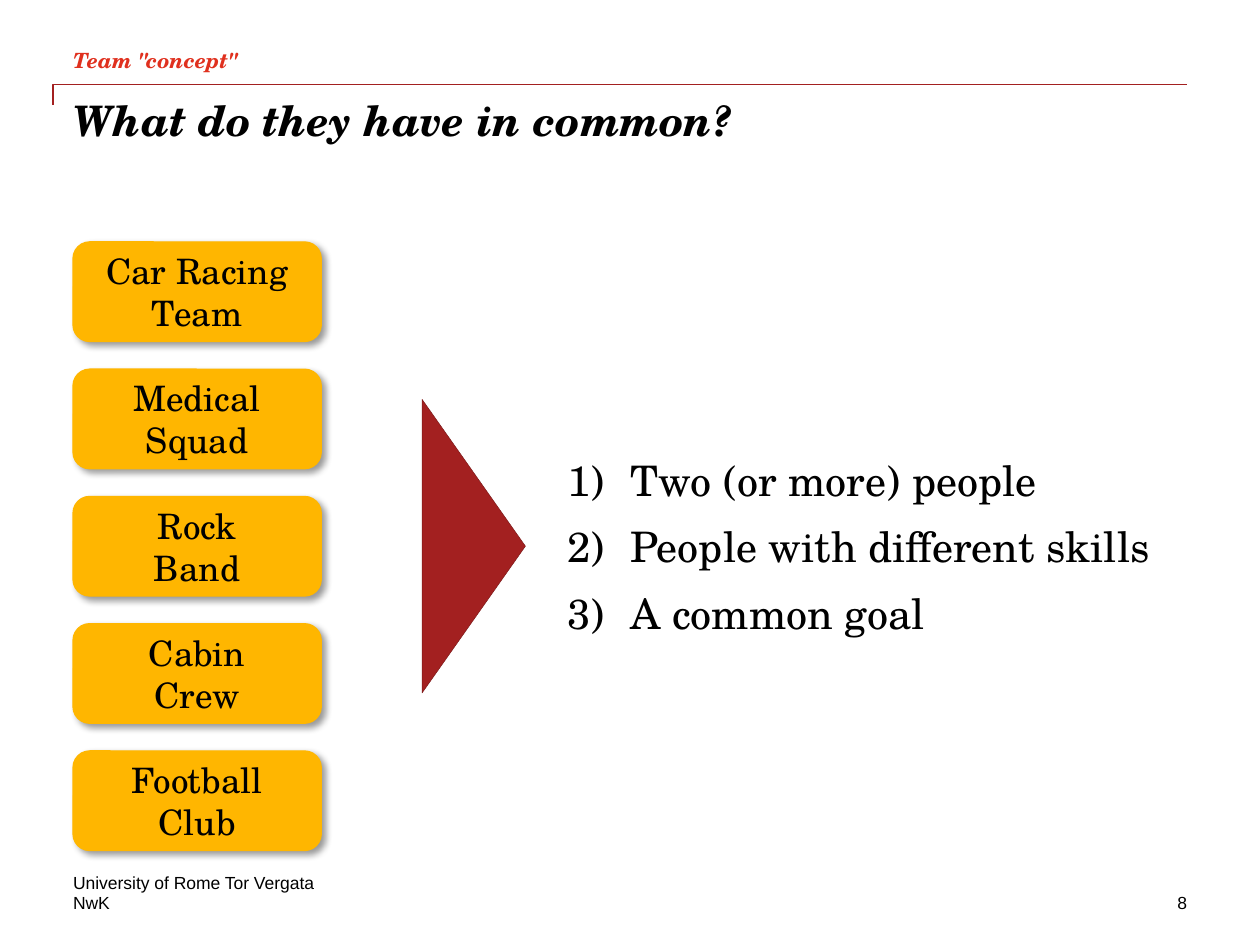
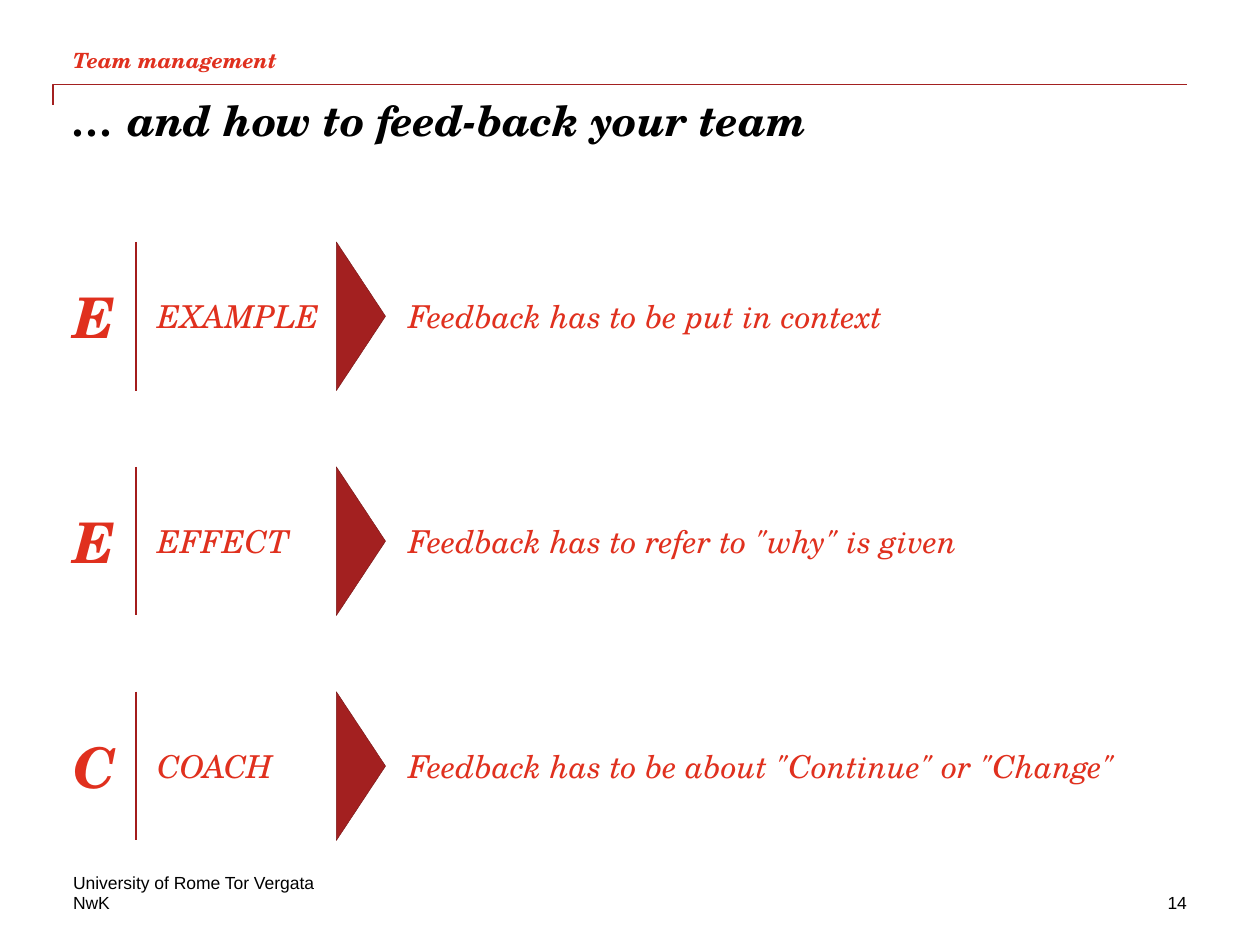
from dataclasses import dataclass

from lxml.etree import SubElement
from pptx import Presentation
from pptx.dml.color import RGBColor
from pptx.enum.shapes import MSO_CONNECTOR, MSO_SHAPE
from pptx.enum.text import MSO_ANCHOR, PP_ALIGN
from pptx.oxml.ns import qn
from pptx.shapes.autoshape import Shape
from pptx.slide import Slide
from pptx.text.text import TextFrame
from pptx.util import Inches, Pt

SERIF = "TeX Gyre Schola"
SANS = "Arial"
BLACK = "000000"
RED = "E0301E"
DARK_RED = "A32020"
ARROW_EDGE = "791818"
DIVIDER_RED = "A31C1C"
AMBER = "FFB600"

LEFT = 0.58
RIGHT = 9.42
CONTENT_TOP = 1.92


@dataclass(frozen=True)
class Style:
    size: float
    font: str = SERIF
    color: str = BLACK
    bold: bool = False
    italic: bool = False


@dataclass(frozen=True)
class Area:
    left: float
    top: float
    width: float
    height: float


@dataclass(frozen=True)
class FeedbackStep:
    initial: str
    name: str
    advice: str


TITLE = Style(24, bold=True, italic=True)
SECTION = Style(12, color=RED, bold=True, italic=True)
FOOTER = Style(10, font=SANS)
TEAM = Style(20)
TRAIT = Style(24)
INITIAL = Style(32, color=RED, bold=True, italic=True)
STEP = Style(18, color=RED, italic=True)

TEAMS = [
    ["Car Racing Team"],
    ["Medical", "Squad"],
    ["Rock", "Band"],
    ["Cabin", "Crew"],
    ["Football", "Club"],
]
TRAITS = ["Two (or more) people", "People with different skills", "A common goal"]
STEPS = [
    FeedbackStep("E", "EXAMPLE", "Feedback has to be put in context"),
    FeedbackStep("E", "EFFECT", 'Feedback has to refer to "why" is given'),
    FeedbackStep("C", "COACH", 'Feedback has to be about "Continue" or "Change"'),
]


def rgb(color: str) -> RGBColor:
    return RGBColor.from_string(color)


def write(frame: TextFrame, lines: list[str], style: Style,
          align: PP_ALIGN, anchor: MSO_ANCHOR, space_after: float = 0) -> None:
    frame.word_wrap = True
    frame.vertical_anchor = anchor
    frame.margin_left = frame.margin_right = Inches(0)
    frame.margin_top = frame.margin_bottom = Inches(0)
    for index, line in enumerate(lines):
        para = frame.add_paragraph() if index else frame.paragraphs[0]
        para.alignment = align
        para.space_after = Pt(space_after)
        span = para.add_run()
        span.text = line
        span.font.name = style.font
        span.font.size = Pt(style.size)
        span.font.bold = style.bold
        span.font.italic = style.italic
        span.font.color.rgb = rgb(style.color)


def add_text(page: Slide, area: Area, lines: list[str], style: Style,
             align: PP_ALIGN = PP_ALIGN.LEFT, anchor: MSO_ANCHOR = MSO_ANCHOR.TOP,
             space_after: float = 0) -> Shape:
    box = page.shapes.add_textbox(Inches(area.left), Inches(area.top),
                                  Inches(area.width), Inches(area.height))
    write(box.text_frame, lines, style, align, anchor, space_after)
    return box


def add_filled_shape(page: Slide, preset: MSO_SHAPE, area: Area,
                     fill: str, edge: str, edge_width: float) -> Shape:
    shape = page.shapes.add_shape(preset, Inches(area.left), Inches(area.top),
                                  Inches(area.width), Inches(area.height))
    shape.shadow.inherit = False
    shape.fill.solid()
    shape.fill.fore_color.rgb = rgb(fill)
    shape.line.color.rgb = rgb(edge)
    shape.line.width = Pt(edge_width)
    return shape


def add_right_triangle_arrow(page: Slide, area: Area) -> None:
    shift = (area.height - area.width) / 2
    upright = Area(area.left - shift, area.top + shift, area.height, area.width)
    arrow = add_filled_shape(page, MSO_SHAPE.ISOSCELES_TRIANGLE, upright,
                             DARK_RED, ARROW_EDGE, 0.25)
    arrow.rotation = 90


def add_divider(page: Slide, x: float, top: float, height: float) -> None:
    divider = page.shapes.add_connector(MSO_CONNECTOR.STRAIGHT, Inches(x), Inches(top),
                                        Inches(x), Inches(top + height))
    divider.line.color.rgb = rgb(DIVIDER_RED)
    divider.line.width = Pt(0.75)
    SubElement(divider._element.spPr, qn("a:effectLst"))


def add_header_rule(page: Slide) -> None:
    builder = page.shapes.build_freeform(Inches(0.42), Inches(0.83))
    corners = [(0.42, 0.67), (RIGHT, 0.67)]
    builder.add_line_segments([(Inches(x), Inches(y)) for x, y in corners], close=False)
    rule = builder.convert_to_shape()
    rule.shadow.inherit = False
    rule.fill.background()
    rule.line.color.rgb = rgb(DARK_RED)
    rule.line.width = Pt(1)


def cast_shadow(shape: Shape) -> None:
    effects = shape._element.spPr.find(qn("a:effectLst"))
    shadow = SubElement(effects, qn("a:outerShdw"), blurRad=str(Pt(4)), dist=str(Pt(3)),
                        dir=str(45 * 60000), algn="tl", rotWithShape="0")
    color = SubElement(shadow, qn("a:srgbClr"), val=BLACK)
    SubElement(color, qn("a:alpha"), val="40000")


def number_paragraphs(frame: TextFrame) -> None:
    for para in frame.paragraphs:
        properties = para._p.get_or_add_pPr()
        properties.set("marL", str(Inches(0.5)))
        properties.set("indent", str(Inches(-0.5)))
        bullet_color = SubElement(properties, qn("a:buClr"))
        SubElement(bullet_color, qn("a:srgbClr"), val=BLACK)
        SubElement(properties, qn("a:buFont"), typeface=SERIF)
        SubElement(properties, qn("a:buAutoNum"), type="arabicParenR")


def add_page(deck: Presentation, section: str, title: str, number: int) -> Slide:
    page = deck.slides.add_slide(deck.slide_layouts[6])
    add_header_rule(page)
    add_text(page, Area(LEFT, 0.33, 8.83, 0.25), [section], SECTION,
             anchor=MSO_ANCHOR.BOTTOM)
    add_text(page, Area(LEFT, 0.75, 8.83, 1), [title], TITLE)
    add_text(page, Area(LEFT, 6.92, 5.75, 0.17), ["University of Rome Tor Vergata"],
             FOOTER, anchor=MSO_ANCHOR.BOTTOM)
    add_text(page, Area(LEFT, 7.08, 2.83, 0.17), ["NwK"], FOOTER)
    add_text(page, Area(7.75, 7.08, 1.67, 0.17), [str(number)], FOOTER,
             align=PP_ALIGN.RIGHT)
    return page


def build_team_concept(deck: Presentation) -> None:
    page = add_page(deck, 'Team "concept"', "What do they have in common?", 8)
    team_pitch = 1.01
    for index, lines in enumerate(TEAMS):
        area = Area(LEFT, CONTENT_TOP + index * team_pitch, 1.97, 0.79)
        card = add_filled_shape(page, MSO_SHAPE.ROUNDED_RECTANGLE, area, AMBER, AMBER, 0.75)
        cast_shadow(card)
        write(card.text_frame, lines, TEAM, PP_ALIGN.CENTER, MSO_ANCHOR.MIDDLE)
    add_right_triangle_arrow(page, Area(3.35, 3.17, 0.82, 2.33))
    traits = add_text(page, Area(4.5, CONTENT_TOP, 4.92, 4.83), TRAITS, TRAIT,
                      anchor=MSO_ANCHOR.MIDDLE, space_after=9)
    number_paragraphs(traits.text_frame)


def build_feedback(deck: Presentation) -> None:
    page = add_page(deck, "Team management", "… and how to feed-back your team", 14)
    step_pitch = 1.785
    height = 1.18
    for index, step in enumerate(STEPS):
        top = CONTENT_TOP + index * step_pitch
        columns = [
            (LEFT, 0.58, step.initial, INITIAL),
            (1.25, 2.54, step.name, STEP),
            (3.24, 6.18, step.advice, STEP),
        ]
        for left, width, text, style in columns:
            add_text(page, Area(left, top, width, height), [text], style,
                     anchor=MSO_ANCHOR.MIDDLE)
        add_divider(page, 1.08, top, height)
        add_right_triangle_arrow(page, Area(2.67, top, 0.39, height))


def main() -> None:
    deck = Presentation()
    deck.slide_width = Inches(10)
    deck.slide_height = Inches(7.5)
    build_team_concept(deck)
    build_feedback(deck)
    deck.save("out.pptx")


if __name__ == "__main__":
    main()
